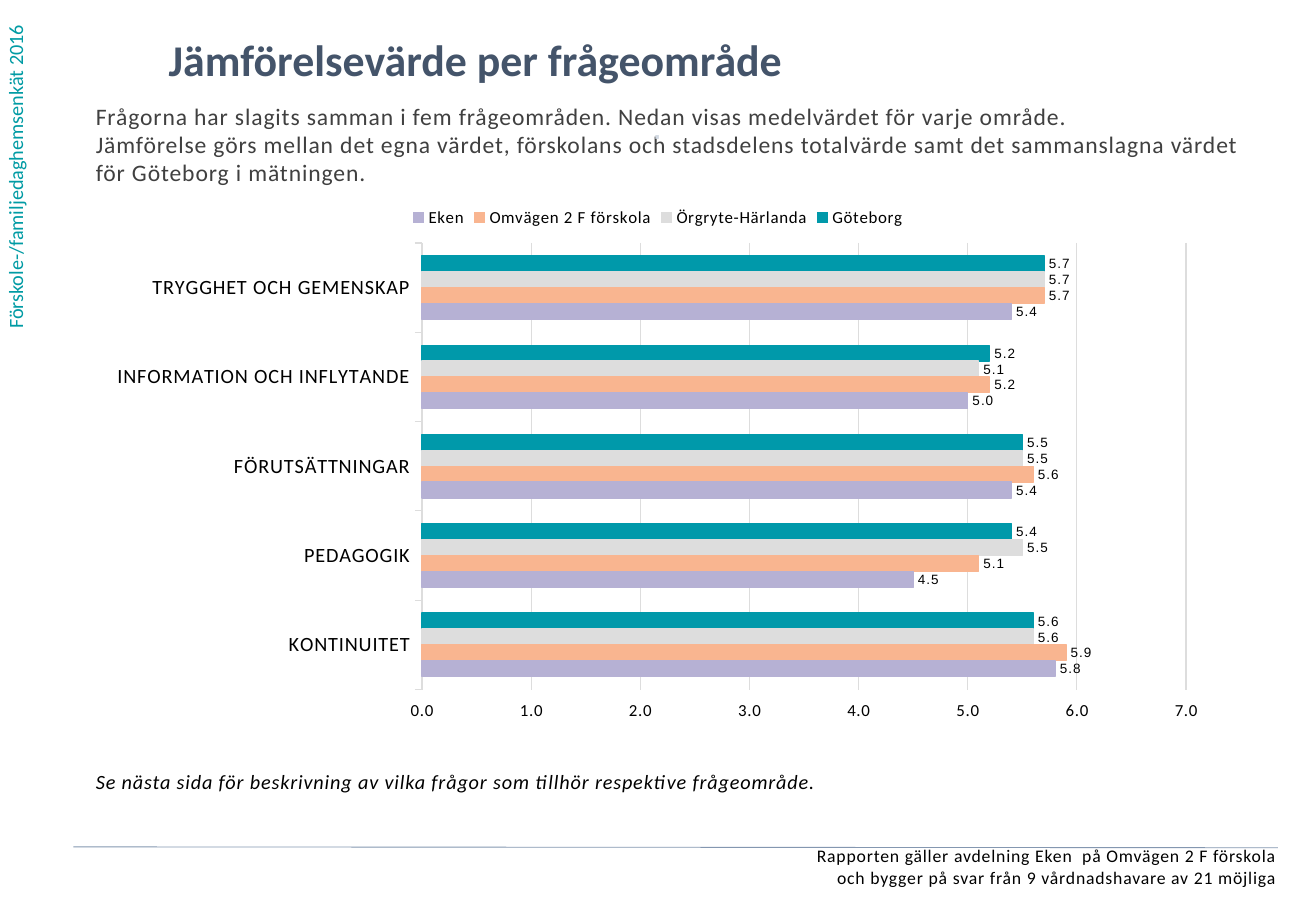
from lxml.etree import SubElement
from pptx import Presentation
from pptx.chart.data import CategoryChartData
from pptx.dml.color import RGBColor
from pptx.enum.chart import (XL_CHART_TYPE, XL_LABEL_POSITION, XL_LEGEND_POSITION,
                             XL_TICK_LABEL_POSITION, XL_TICK_MARK)
from pptx.enum.shapes import MSO_CONNECTOR
from pptx.enum.text import PP_ALIGN
from pptx.oxml.ns import qn
from pptx.util import Pt

FONT = "Calibri"
GRID = "DDDDDD"
SPACING = "50"  # letter spacing in hundredths of a point
VALUE_FORMAT = "0.0;0.0"

AREAS = ["TRYGGHET OCH GEMENSKAP", "INFORMATION OCH INFLYTANDE",
         "FÖRUTSÄTTNINGAR", "PEDAGOGIK", "KONTINUITET"]
UNITS = [
    ("Göteborg", "0099AA", (5.7, 5.2, 5.5, 5.4, 5.6)),
    ("Örgryte-Härlanda", GRID, (5.7, 5.1, 5.5, 5.5, 5.6)),
    ("Omvägen 2 F förskola", "F9B590", (5.7, 5.2, 5.6, 5.1, 5.9)),
    ("Eken", "B6B1D4", (5.4, 5.0, 5.4, 4.5, 5.8)),
]


def color(value):
    return RGBColor.from_string(value)


def set_font(font, size, value="000000", name=FONT):
    font.size = Pt(size)
    font.name = name
    font.color.rgb = color(value)


def set_line(line, value, width=0.75):
    line.color.rgb = color(value)
    line.width = Pt(width)


def add_text(page, place, text, size, value="000000", bold=False, italic=False,
             align=PP_ALIGN.LEFT, spaced=True):
    box = page.shapes.add_textbox(*map(Pt, place))
    frame = box.text_frame
    frame.word_wrap = True
    frame.margin_left = frame.margin_right = 0
    frame.margin_top = frame.margin_bottom = 0
    frame.text = text
    for paragraph in frame.paragraphs:
        paragraph.alignment = align
        for span in paragraph.runs:
            set_font(span.font, size, value)
            span.font.bold = bold
            span.font.italic = italic
            if spaced:
                span.font._element.set("spc", SPACING)
    return box


def add_side_label(page, text):
    box = add_text(page, (-1.8, 0, 27, 195), text, 12, "009BA4", spaced=False)
    frame = box.text_frame
    frame.margin_left = frame.margin_right = Pt(7.2)
    frame.margin_top = Pt(2.2)
    frame._txBody.bodyPr.set("vert", "vert270")


def add_rule(page, start, end):
    rule = page.shapes.add_connector(MSO_CONNECTOR.STRAIGHT, *map(Pt, start + end))
    set_line(rule.line, "8497B0", 0.5)
    SubElement(rule._element.spPr, qn("a:effectLst"))


def place_plot(chart, x, y, w, h):
    area = chart._chartSpace.chart.plotArea
    for old in area.findall(qn("c:layout")):
        area.remove(old)
    layout = SubElement(area, qn("c:layout"))
    area.insert(0, layout)
    manual = SubElement(layout, qn("c:manualLayout"))
    settings = {"layoutTarget": "inner", "xMode": "edge", "yMode": "edge",
                "x": x, "y": y, "w": w, "h": h}
    for tag, setting in settings.items():
        SubElement(manual, qn(f"c:{tag}")).set("val", str(setting))


def style_axes(chart):
    areas = chart.category_axis
    areas.reverse_order = True
    areas.major_tick_mark = XL_TICK_MARK.OUTSIDE
    set_line(areas.format.line, GRID)
    set_font(areas.tick_labels.font, 12)

    scale = chart.value_axis
    scale.minimum_scale, scale.maximum_scale, scale.major_unit = 0, 7, 1
    scale.major_tick_mark = XL_TICK_MARK.OUTSIDE
    scale.tick_label_position = XL_TICK_LABEL_POSITION.HIGH  # bottom, as areas run down
    scale.format.line.fill.background()
    set_line(scale.major_gridlines.format.line, GRID)
    scale.tick_labels.number_format = VALUE_FORMAT
    scale.tick_labels.number_format_is_linked = False
    set_font(scale.tick_labels.font, 10)


def style_series(series, fill):
    series.format.fill.solid()
    series.format.fill.fore_color.rgb = color(fill)
    set_line(series.format.line, fill)
    labels = series.data_labels
    labels.show_value = True
    labels.number_format = VALUE_FORMAT
    labels.number_format_is_linked = False
    labels.position = XL_LABEL_POSITION.OUTSIDE_END
    set_font(labels.font, 8, name="Arial")


def add_comparison_chart(page, place):
    data = CategoryChartData(number_format="0.0")
    data.categories = AREAS
    for name, _, values in UNITS:
        data.add_series(name, values)
    chart = page.shapes.add_chart(XL_CHART_TYPE.BAR_CLUSTERED,
                                  *map(Pt, place), data).chart
    set_font(chart.font, 10)
    chart.has_title = False
    chart.has_legend = True
    chart.legend.position = XL_LEGEND_POSITION.TOP
    chart.legend.include_in_layout = False
    set_font(chart.legend.font, 10)

    plot = chart.plots[0]
    plot.gap_width = 162
    plot.vary_by_categories = False
    for series, (_, fill, _) in zip(plot.series, UNITS):
        style_series(series, fill)
    style_axes(chart)
    place_plot(chart, 0.29, 0.09, 0.68, 0.83)
    for properties in chart._chartSpace.iter(qn("a:defRPr")):
        properties.set("spc", SPACING)


def main():
    deck = Presentation()
    deck.slide_width, deck.slide_height = Pt(780), Pt(540)
    page = deck.slides.add_slide(deck.slide_layouts[6])

    # Survey name along the left edge
    add_side_label(page, "Förskole-/familjedaghemsenkät 2016")

    # Heading and introduction
    add_text(page, (100, 19.5, 600, 41), "Jämförelsevärde per frågeområde",
             26, "44546A", bold=True, spaced=False)
    add_text(page, (56.8, 60.2, 681, 54),
             "Frågorna har slagits samman i fem frågeområden. "
             "Nedan visas medelvärdet för varje område.\n"
             "Jämförelse görs mellan det egna värdet, förskolans och stadsdelens "
             "totalvärde samt det sammanslagna värdet för Göteborg i mätningen.",
             14, "404040")
    add_text(page, (278.5, 73.5, 222, 28), "⋅", 12, "D2D9E2", bold=True,
             align=PP_ALIGN.CENTER)

    # Comparison and its note
    add_comparison_chart(page, (57, 115.3, 666, 319))
    add_text(page, (56.8, 456, 666, 20),
             "Se nästa sida för beskrivning av vilka frågor som tillhör "
             "respektive frågeområde.", 12, italic=True)

    # Footer
    add_rule(page, (43.5, 502), (757.5, 502.5))
    add_text(page, (8, 501, 748.7, 31),
             "Rapporten gäller avdelning Eken  på Omvägen 2 F förskola\n"
             "och bygger på svar från 9 vårdnadshavare av 21 möjliga",
             10.5, align=PP_ALIGN.RIGHT)

    deck.save("out.pptx")


if __name__ == "__main__":
    main()
